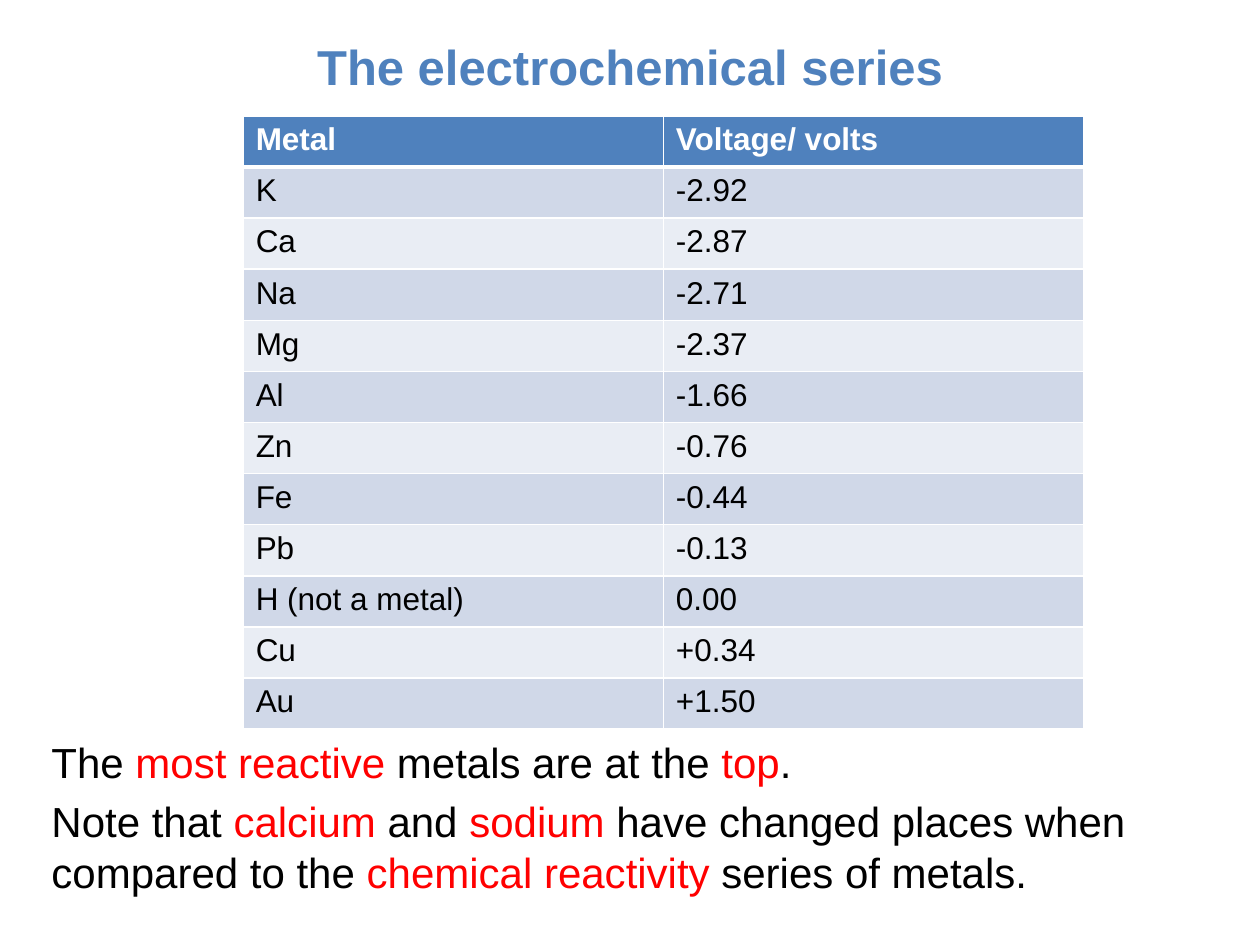
from lxml.etree import SubElement
from pptx import Presentation
from pptx.dml.color import RGBColor
from pptx.enum.text import MSO_ANCHOR, PP_ALIGN
from pptx.oxml.ns import qn
from pptx.util import Inches, Pt

BLUE = RGBColor(0x4F, 0x81, 0xBD)
BAND_DARK = RGBColor(0xD0, 0xD8, 0xE8)
BAND_LIGHT = RGBColor(0xE9, 0xED, 0xF4)
WHITE = RGBColor(0xFF, 0xFF, 0xFF)
BLACK = RGBColor(0, 0, 0)
RED = RGBColor(0xFF, 0, 0)

TITLE = "The electrochemical series"
SERIES = [
    ("Metal", "Voltage/ volts"),
    ("K", "-2.92"),
    ("Ca", "-2.87"),
    ("Na", "-2.71"),
    ("Mg", "-2.37"),
    ("Al", "-1.66"),
    ("Zn", "-0.76"),
    ("Fe", "-0.44"),
    ("Pb", "-0.13"),
    ("H (not a metal)", "0.00"),
    ("Cu", "+0.34"),
    ("Au", "+1.50"),
]
# Notes alternate between plain and highlighted text
NOTES = [
    ["The ", "most reactive ", "metals are at the ", "top", "."],
    ["Note that ", "calcium", " and ", "sodium",
     " have changed places when compared to the ", "chemical reactivity",
     " series of metals."],
]


def set_font(font, size, color, bold=False):
    font.name = "Arial"
    font.size = Pt(size)
    font.bold = bold
    font.color.rgb = color


def add_text_frame(slide, left, top, width, height):
    box = slide.shapes.add_textbox(
        Inches(left), Inches(top), Inches(width), Inches(height))
    box.text_frame.word_wrap = True
    return box.text_frame


def set_borders(cell, widths):
    tc_pr = cell._tc.get_or_add_tcPr()
    for side, width in widths.items():
        line = SubElement(tc_pr, qn(f"a:ln{side}"), w=str(Pt(width)))
        fill = SubElement(line, qn("a:solidFill"))
        SubElement(fill, qn("a:srgbClr"), val=str(WHITE))


prs = Presentation()
prs.slide_width, prs.slide_height = Inches(10), Inches(7.5)
s = prs.slides.add_slide(prs.slide_layouts[6])

# Title
tf = add_text_frame(s, 0.75, 0.21, 8.5, 0.63)
tf.vertical_anchor = MSO_ANCHOR.MIDDLE
p = tf.paragraphs[0]
p.text = TITLE
p.alignment = PP_ALIGN.CENTER
set_font(p.font, 28, BLUE, bold=True)

# Table of voltages
table = s.shapes.add_table(len(SERIES), 2, Inches(1.93), Inches(0.92),
                           Inches(6.67), Inches(4.87)).table
for i, row in enumerate(SERIES):
    header = i == 0
    fill_color = BLUE if header else BAND_DARK if i % 2 else BAND_LIGHT
    widths = {"L": 1, "R": 1, "T": 3 if i == 1 else 1, "B": 3 if header else 1}
    for j, text in enumerate(row):
        cell = table.cell(i, j)
        set_borders(cell, widths)
        cell.fill.solid()
        cell.fill.fore_color.rgb = fill_color
        p = cell.text_frame.paragraphs[0]
        p.text = text
        set_font(p.font, 18, WHITE if header else BLACK, bold=header)

# Notes below the table
tf = add_text_frame(s, 0.31, 5.8, 9.69, 1.96)
for i, parts in enumerate(NOTES):
    p = tf.add_paragraph() if i else tf.paragraphs[0]
    p.space_before = Pt(4.8)
    for j, text in enumerate(parts):
        r = p.add_run()
        r.text = text
        set_font(r.font, 24, RED if j % 2 else BLACK)

prs.save("out.pptx")
